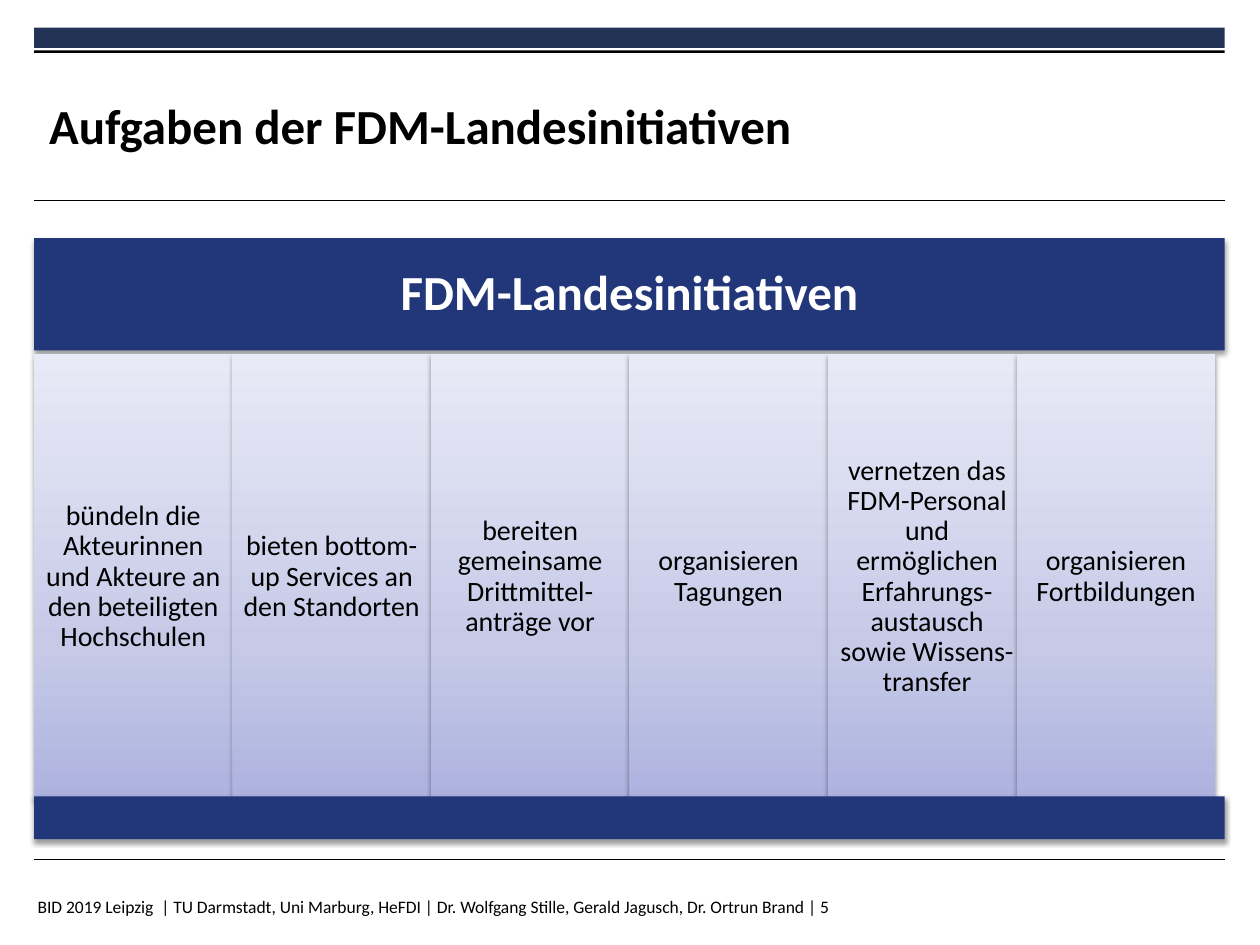
from copy import deepcopy
from dataclasses import dataclass

from lxml import etree
from pptx import Presentation
from pptx import util as u
from pptx.dml.color import RGBColor
from pptx.enum import shapes, text
from pptx.oxml import parse_xml
from pptx.oxml.ns import nsdecls, qn


@dataclass(frozen=True)
class Theme:
    font: str = "Calibri"
    black: str = "000000"
    white: str = "FFFFFF"
    band: str = "233356"
    navy: str = "22367A"
    column: tuple = ((0, "ADB2DF"), (0.35, "C6CAE7"), (1, "E9EAF7"))
    heading: int = 28
    body: int = 16
    footer: int = 10
    rule: float = 0.6


def set_all(target, values):
    for name, value in values.items():
        setattr(target, name, value)


class SlideBuilder:
    def __init__(self, slide, theme):
        self.slide = slide
        self.theme = theme

    def label(self, shape, words, size, color=None, bold=False, centered=False,
              inset=0, wrap=True, anchor=text.MSO_ANCHOR.MIDDLE):
        frame = shape.text_frame
        set_all(frame, {"word_wrap": wrap, "vertical_anchor": anchor})
        if inset is not None:
            sides = ("left", "top", "right", "bottom")
            set_all(frame, {f"margin_{side}": u.Inches(inset) for side in sides})
        paragraph = frame.paragraphs[0]
        paragraph.text = words
        if centered:
            set_all(paragraph, {"alignment": text.PP_ALIGN.CENTER, "line_spacing": 0.9})
        set_all(paragraph.font, {"name": self.theme.font, "size": u.Pt(size), "bold": bold})
        paragraph.font.color.rgb = RGBColor.from_string(color or self.theme.black)

    def text_box(self, box, words, size, **style):
        shape = self.slide.shapes.add_textbox(*map(u.Inches, box))
        self.label(shape, words, size, **style)

    def block(self, box, fill, shadow=False):
        shape = self.slide.shapes.add_shape(
            shapes.MSO_SHAPE.RECTANGLE, *map(u.Inches, box))
        shape.shadow.inherit = False
        shape.line.fill.background()
        if isinstance(fill, str):
            shape.fill.solid()
            shape.fill.fore_color.rgb = RGBColor.from_string(fill)
        else:
            self.shade(shape, fill)
        if shadow:
            self.drop_shadow(shape)
        return shape

    def shade(self, shape, stops):
        shape.fill.gradient()
        shape.fill.gradient_angle = 90
        stop_list = shape._element.spPr.find(".//" + qn("a:gsLst"))
        while len(stop_list) < len(stops):
            stop_list.append(deepcopy(stop_list[0]))
        for stop, (position, color) in zip(shape.fill.gradient_stops, stops):
            stop.position = position
            stop.color.rgb = RGBColor.from_string(color)

    def drop_shadow(self, shape):
        effects = shape._element.spPr.find(qn("a:effectLst"))
        effects.append(parse_xml(
            f'<a:outerShdw {nsdecls("a")} blurRad="{u.Pt(3.1)}" dist="{u.Pt(1.6)}" '
            f'dir="5400000" rotWithShape="0"><a:srgbClr val="{self.theme.black}">'
            '<a:alpha val="38000"/></a:srgbClr></a:outerShdw>'))

    def rule(self, left, top, width):
        line = self.slide.shapes.add_connector(
            shapes.MSO_CONNECTOR.STRAIGHT,
            *map(u.Inches, (left, top, left + width, top)))
        line.line.width = u.Pt(self.theme.rule)
        line.line.color.rgb = RGBColor.from_string(self.theme.black)
        etree.SubElement(line._element.spPr, qn("a:effectLst"))


TASKS = (
    "bündeln die Akteurinnen und Akteure an den beteiligten Hochschulen",
    "bieten bottom-up Services an den Standorten",
    "bereiten gemeinsame Drittmittel-anträge vor",
    "organisieren Tagungen",
    "vernetzen das FDM-Personal und ermöglichen Erfahrungs-austausch sowie Wissens-transfer",
    "organisieren Fortbildungen",
)
LEFT, WIDTH = 0.27, 9.45
COLUMN_WIDTH = WIDTH / len(TASKS)
LAST_COLUMN_LEFT = 8.07


def main():
    presentation = Presentation()
    set_all(presentation, {"slide_width": u.Inches(10), "slide_height": u.Inches(7.5)})
    slide = presentation.slides.add_slide(presentation.slide_layouts[6])
    theme = Theme()
    builder = SlideBuilder(slide, theme)

    builder.block((LEFT, 0.22, WIDTH, 0.16), theme.band)
    builder.block((LEFT, 0.4, WIDTH, 0.02), theme.black)
    for top in (1.59, 6.82):
        builder.rule(LEFT, top, WIDTH)

    builder.text_box((0.39, 0.53, 7.52, 0.92), "Aufgaben der FDM-Landesinitiativen",
                     theme.heading, bold=True)
    builder.text_box(
        (0.2, 7.06, 7.08, 0.44),
        "BID 2019 Leipzig  | TU Darmstadt, Uni Marburg, HeFDI | "
        "Dr. Wolfgang Stille, Gerald Jagusch, Dr. Ortrun Brand | 5",
        theme.footer, inset=None, wrap=False, anchor=text.MSO_ANCHOR.TOP)

    header = builder.block((LEFT, 1.89, WIDTH, 0.89), theme.navy, shadow=True)
    builder.label(header, "FDM-Landesinitiativen", theme.heading, color=theme.white,
                  bold=True, centered=True, inset=0.12)

    column_lefts = [LEFT + index * COLUMN_WIDTH for index in range(len(TASKS) - 1)]
    for left, task in zip(column_lefts + [LAST_COLUMN_LEFT], TASKS):
        column = builder.block((left, 2.81, COLUMN_WIDTH, 3.54), theme.column, shadow=True)
        builder.label(column, task, theme.body, centered=True, inset=0.07)

    builder.block((LEFT, 6.32, WIDTH, 0.34), theme.navy, shadow=True)
    presentation.save("out.pptx")


if __name__ == "__main__":
    main()
